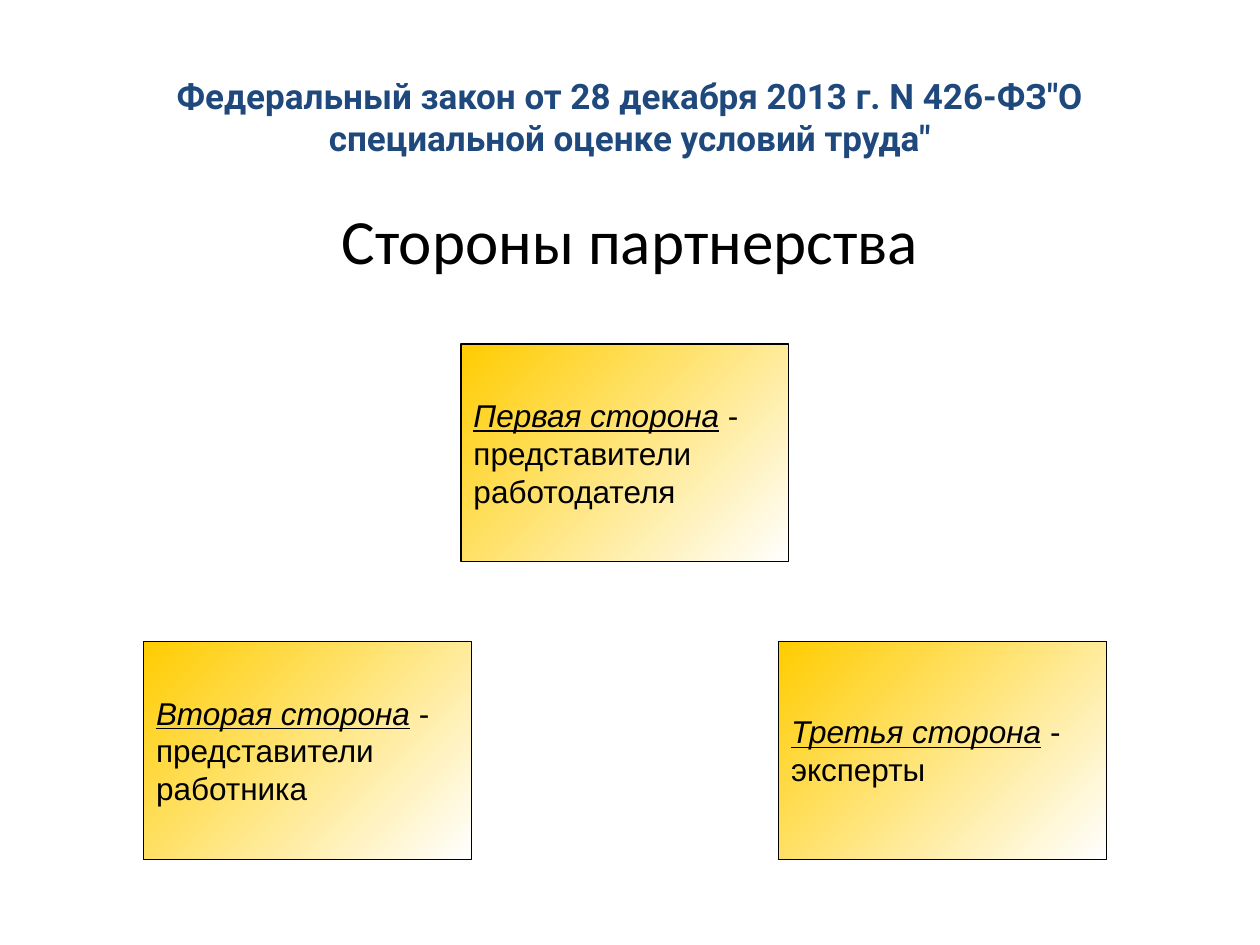
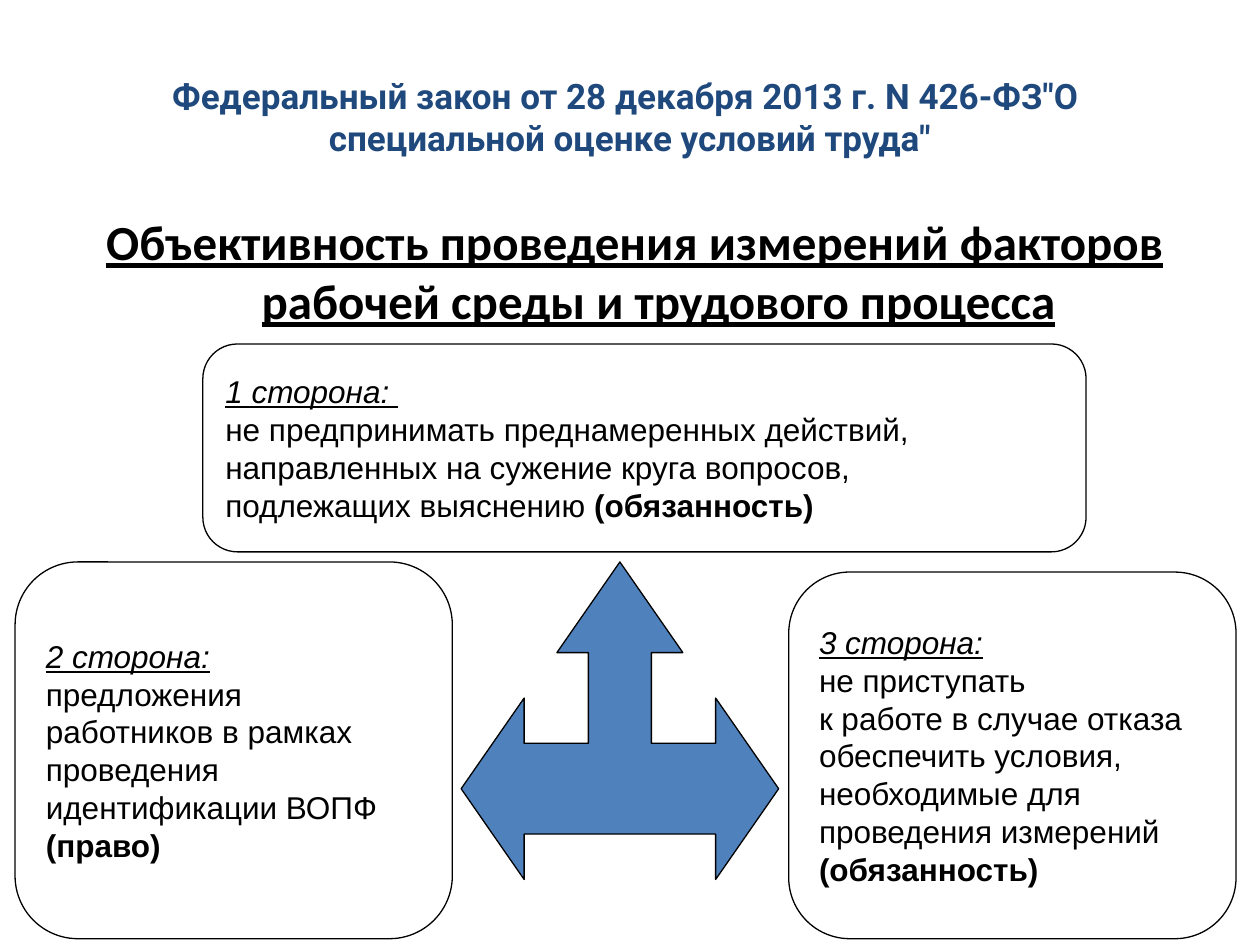
from dataclasses import dataclass

from pptx import Presentation
from pptx.dml.color import RGBColor
from pptx.enum import shapes, text
from pptx.shapes.autoshape import Shape
from pptx.slide import Slide
from pptx import util as u

PX = u.Inches(1) // 100


@dataclass(frozen=True)
class Theme:
    black: RGBColor = RGBColor(0, 0, 0)
    white: RGBColor = RGBColor(255, 255, 255)
    navy: RGBColor = RGBColor(0x1F, 0x49, 0x7D)
    blue: RGBColor = RGBColor(0x4F, 0x81, 0xBD)
    gold: RGBColor = RGBColor(0xFF, 0xCC, 0)
    law_font: str = "Roboto"
    heading_font: str = "Calibri"
    card_font: str = "Arial"
    law_size: int = 20
    title_size: int = 36
    heading_size: int = 28
    card_size: int = 18
    outline: float = 0.75


THEME = Theme()


@dataclass(frozen=True)
class Area:
    left: int
    top: int
    width: int
    height: int

    def emu(self) -> tuple[int, ...]:
        return tuple(n * PX for n in (self.left, self.top, self.width, self.height))


@dataclass(frozen=True)
class Span:
    words: str
    lead: bool = False
    bold: bool = False


@dataclass(frozen=True)
class Card:
    area: Area
    lines: tuple[tuple[Span, ...], ...]


def party(left: int, top: int, name: str, *members: str) -> Card:
    first = (Span(name, lead=True), Span(" -"))
    return Card(Area(left, top, 260, 173), (first, *((Span(m),) for m in members)))


def plain(*lines: str) -> tuple[tuple[Span, ...], ...]:
    return tuple((Span(line),) for line in lines)


def lead(words: str) -> tuple[Span, ...]:
    return (Span(words, lead=True),)


LAW_AREA = Area(50, 30, 900, 125)
LAW = 'Федеральный закон от 28 декабря 2013 г. N 426-ФЗ"О {}специальной оценке условий труда"'

PARTIES = (
    party(366, 273, "Первая сторона", "представители", "работодателя"),
    party(114, 509, "Вторая сторона", "представители", "работника"),
    party(618, 509, "Третья сторона", "эксперты"),
)

DUTIES = (
    Card(Area(161, 273, 701, 165), (
        lead("1 сторона: "),
        *plain("не предпринимать преднамеренных действий,",
               "направленных на сужение круга вопросов,"),
        (Span("подлежащих выяснению "), Span("(обязанность)", bold=True)),
    )),
    Card(Area(12, 446, 347, 299), (
        lead("2 сторона:"),
        *plain("предложения", "работников в рамках", "проведения",
               "идентификации ВОПФ"),
        (Span("(право)", bold=True),),
    )),
    Card(Area(626, 454, 355, 291), (
        lead("3 сторона:"),
        *plain("не приступать", "к работе в случае отказа",
               "обеспечить условия,", "необходимые для", "проведения измерений"),
        (Span("(обязанность)", bold=True),),
    )),
)

ARROW_CENTER, ARROW_TOP = 492, 446
ARROW_HALF = ((50, 72), (25, 72), (25, 144), (76, 144), (76, 108),
              (126, 180), (76, 252), (76, 216))


def style(font: text, name: str, size: int, color: RGBColor) -> None:
    font.name = name
    font.size = u.Pt(size)
    font.color.rgb = color


def emphasize(font: text, span: Span) -> None:
    font.bold = span.bold
    font.italic = span.lead
    font.underline = span.lead


def add_heading(page: Slide, area: Area, words: str, name: str, size: int,
                color: RGBColor, bold: bool = False, underline: bool = False,
                hanging: int = 0) -> None:
    frame = page.shapes.add_textbox(*area.emu()).text_frame
    frame.word_wrap = True
    frame.vertical_anchor = text.MSO_ANCHOR.TOP if hanging else text.MSO_ANCHOR.MIDDLE
    para = frame.paragraphs[0]
    para.text = words
    para.alignment = text.PP_ALIGN.CENTER
    if hanging:
        properties = para._p.get_or_add_pPr()
        properties.set("marL", str(hanging * PX))
        properties.set("indent", str(-hanging * PX))
    style(para.font, name, size, color)
    para.font.bold = bold
    para.font.underline = underline


def add_law(page: Slide, separator: str = "") -> None:
    add_heading(page, LAW_AREA, LAW.format(separator), THEME.law_font,
                THEME.law_size, THEME.navy, bold=True)


def outline(shape: Shape) -> None:
    shape.shadow.inherit = False
    shape.line.color.rgb = THEME.black
    shape.line.width = u.Pt(THEME.outline)


def fill_solid(shape: Shape, color: RGBColor) -> None:
    shape.fill.solid()
    shape.fill.fore_color.rgb = color


def fill_gold(shape: Shape) -> None:
    shape.fill.gradient()
    shape.fill.gradient_angle = 315
    for stop, color in zip(shape.fill.gradient_stops, (THEME.gold, THEME.white)):
        stop.color.rgb = color


def add_card(page: Slide, card: Card, kind: shapes.MSO_SHAPE) -> Shape:
    box = page.shapes.add_shape(kind, *card.area.emu())
    outline(box)
    frame = box.text_frame
    frame.word_wrap = True
    frame.vertical_anchor = text.MSO_ANCHOR.MIDDLE
    for index, spans in enumerate(card.lines):
        para = frame.add_paragraph() if index else frame.paragraphs[0]
        para.alignment = text.PP_ALIGN.LEFT
        style(para.font, THEME.card_font, THEME.card_size, THEME.black)
        for span in spans:
            run = para.add_run()
            run.text = span.words
            emphasize(para.font if len(spans) == 1 else run.font, span)
    return box


def add_three_way_arrow(page: Slide) -> None:
    right = [(ARROW_CENTER + x, ARROW_TOP + y) for x, y in ARROW_HALF]
    left = [(ARROW_CENTER - x, ARROW_TOP + y) for x, y in reversed(ARROW_HALF)]
    builder = page.shapes.build_freeform(ARROW_CENTER, ARROW_TOP, scale=PX)
    builder.add_line_segments(right + left, close=True)
    arrow = builder.convert_to_shape()
    outline(arrow)
    fill_solid(arrow, THEME.blue)


def draw_parties(page: Slide) -> None:
    add_heading(page, Area(75, 139, 850, 102), "Стороны партнерства",
                THEME.heading_font, THEME.title_size, THEME.black)
    for card in PARTIES:
        fill_gold(add_card(page, card, shapes.MSO_SHAPE.RECTANGLE))
    add_law(page)


def draw_duties(page: Slide) -> None:
    add_heading(page, Area(35, 163, 937, 550),
                "Объективность проведения измерений факторов рабочей среды "
                "и трудового процесса",
                THEME.heading_font, THEME.heading_size, THEME.black,
                bold=True, underline=True, hanging=38)
    add_three_way_arrow(page)
    for card in DUTIES:
        box = add_card(page, card, shapes.MSO_SHAPE.FLOWCHART_ALTERNATE_PROCESS)
        fill_solid(box, THEME.white)
    add_law(page, "\v")


def main() -> None:
    deck = Presentation()
    deck.slide_width, deck.slide_height = 1000 * PX, 750 * PX
    for draw in (draw_parties, draw_duties):
        draw(deck.slides.add_slide(deck.slide_layouts[6]))
    deck.save("out.pptx")


if __name__ == "__main__":
    main()
